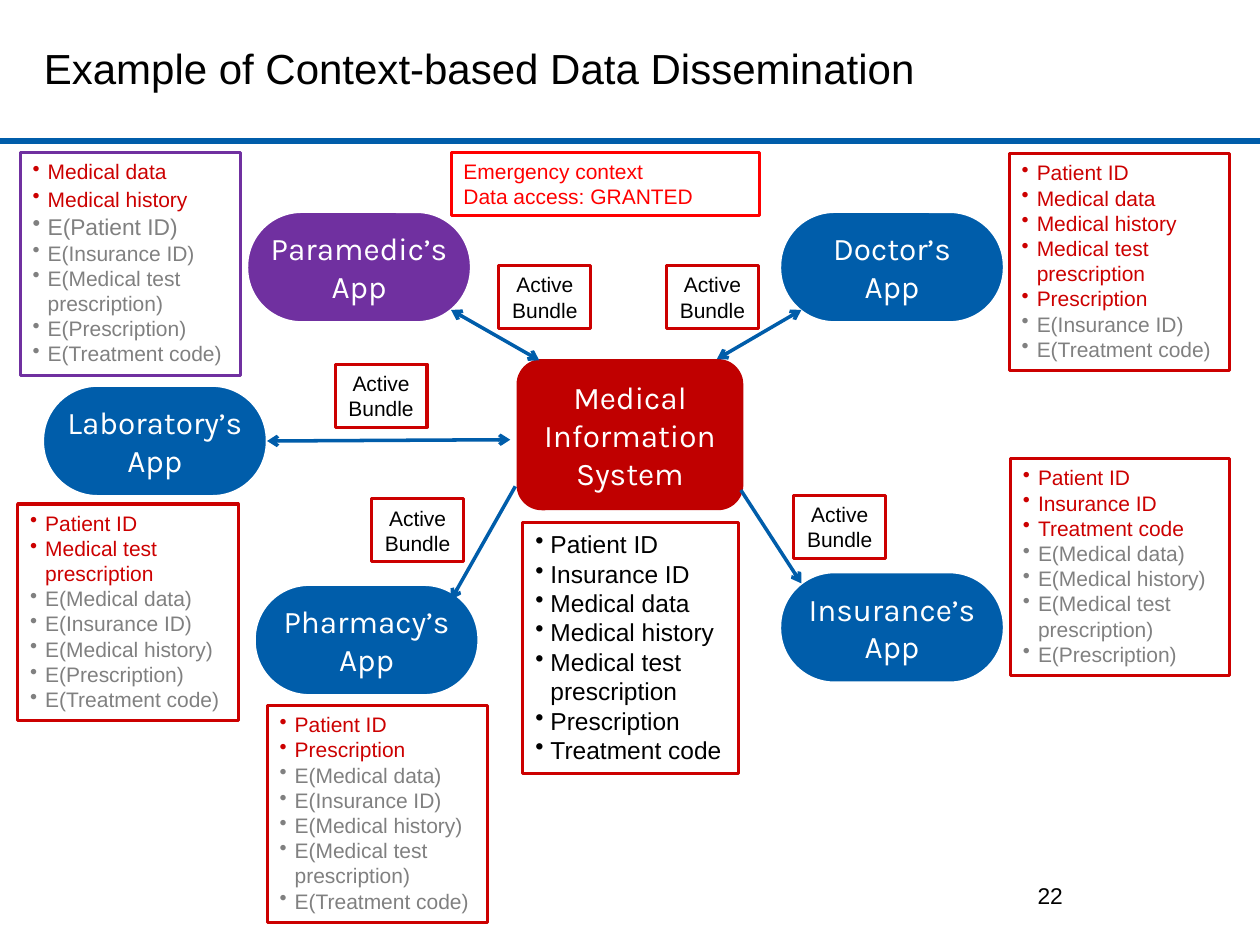
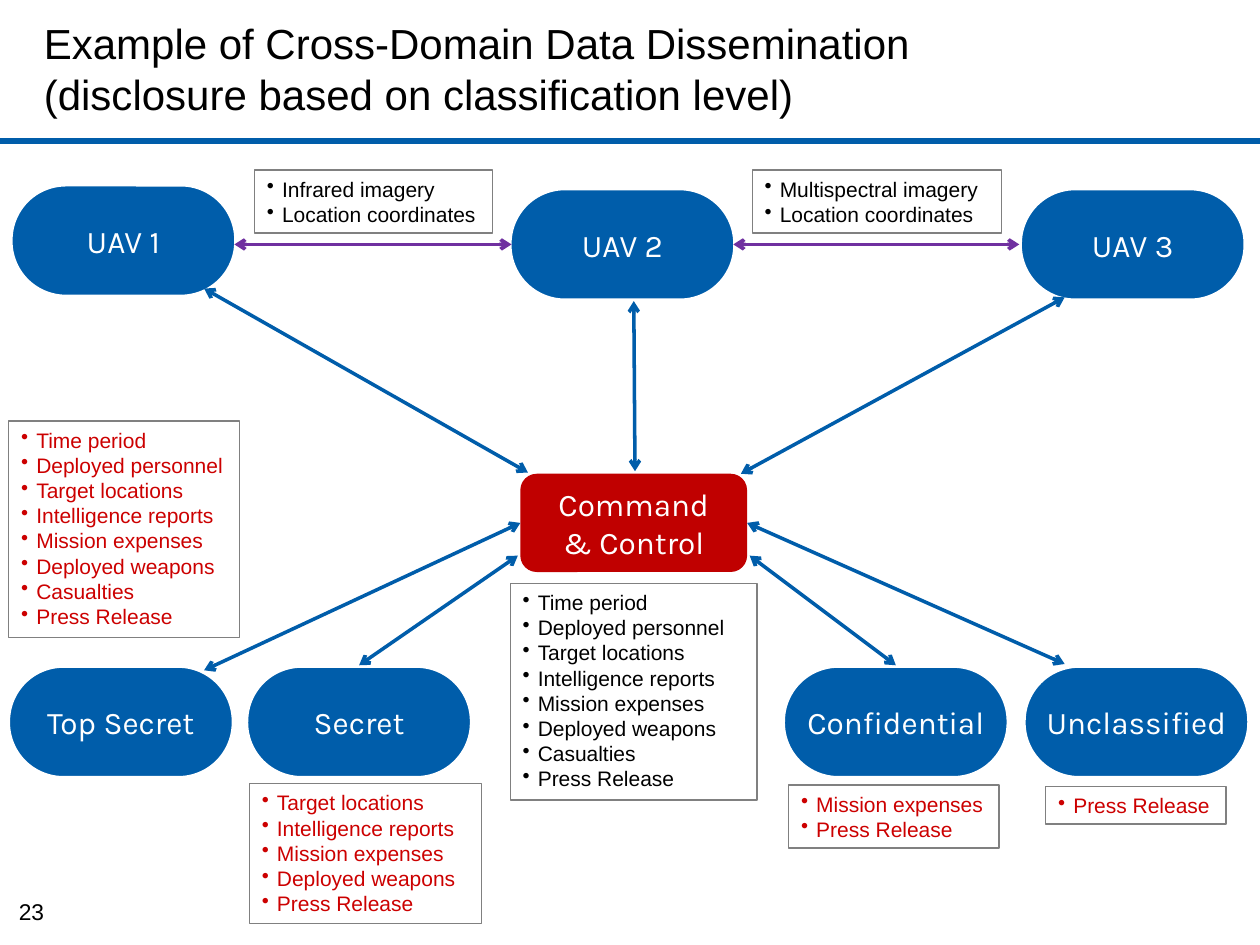
from lxml import etree
from pptx import Presentation
from pptx.dml.color import RGBColor
from pptx.enum.shapes import MSO_CONNECTOR, MSO_SHAPE
from pptx.enum.text import MSO_ANCHOR as ANCHOR, PP_ALIGN as ALIGN
from pptx.oxml.ns import qn
from pptx.util import Inches, Pt

BLUE = RGBColor(0x00, 0x5D, 0xAA)
PURPLE = RGBColor(0x70, 0x30, 0xA0)
DARK_RED = RGBColor(0xC0, 0x00, 0x00)
RED = RGBColor(0xCC, 0x00, 0x00)
BRIGHT_RED = RGBColor(0xFF, 0x00, 0x00)
GRAY = RGBColor(0x80, 0x80, 0x80)
BLACK = RGBColor(0x00, 0x00, 0x00)
WHITE = RGBColor(0xFF, 0xFF, 0xFF)

BODY_FONT, NODE_FONT = "Arial", "Karla"
PILL_W, PILL_H = 1.8, 0.9
BULLET_INDENT = 0.12


# ---- Basic parts ----
def write_lines(tf, lines, size, color, font=BODY_FONT, align=ALIGN.LEFT):
    """Write one paragraph per line and return the paragraphs."""
    for i, line in enumerate(lines):
        p = tf.paragraphs[0] if i == 0 else tf.add_paragraph()
        p.text = line
        p.alignment = align
        p.font.size, p.font.name = Pt(size), font
        p.font.color.rgb = color
    return tf.paragraphs


def set_frame(sp, anchor, margin_x=0.1, margin_y=0.05, wrap=True):
    tf = sp.text_frame
    tf.word_wrap = wrap
    tf.vertical_anchor = anchor
    tf.margin_left = tf.margin_right = Inches(margin_x)
    tf.margin_top = tf.margin_bottom = Inches(margin_y)
    return tf


def add_box(slide, kind, box, fill=None, line=None, width=1.75):
    sp = slide.shapes.add_shape(kind, *map(Inches, box))
    sp.shadow.inherit = False
    if fill is None:
        sp.fill.background()
    else:
        sp.fill.solid()
        sp.fill.fore_color.rgb = fill
    if line is None:
        sp.line.fill.background()
    else:
        sp.line.color.rgb = line
        sp.line.width = Pt(width)
    return sp


def add_line(slide, start, end, color=BLUE, width=2, ends=()):
    ln = slide.shapes.add_connector(
        MSO_CONNECTOR.STRAIGHT, *map(Inches, (*start, *end)))
    ln.line.color.rgb = color
    ln.line.width = Pt(width)
    for tag in ends:
        etree.SubElement(ln.line._get_or_add_ln(), qn(f"a:{tag}"), type="arrow")
    etree.SubElement(ln._element.spPr, qn("a:effectLst"))


def add_arrow(slide, start, end, color=BLUE, both=True):
    add_line(slide, start, end, color,
             ends=("headEnd", "tailEnd") if both else ("tailEnd",))


def set_indent(p, left, bullet=True):
    pPr = p._p.get_or_add_pPr()
    pPr.set("marL", str(Inches(left)))
    pPr.set("indent", str(-Inches(left) if bullet else 0))
    if bullet:
        mark = etree.Element(qn("a:buChar"), char="•")
        pPr.insert_element_before(mark, "a:tabLst", "a:defRPr", "a:extLst")


# ---- Diagram parts ----
def add_pill(slide, x, y, lines, fill=BLUE):
    sp = add_box(slide, MSO_SHAPE.ROUNDED_RECTANGLE,
                 (x, y, PILL_W, PILL_H), fill, WHITE, 3)
    sp.adjustments[0] = 0.493
    tf = set_frame(sp, ANCHOR.MIDDLE, 0.02, 0.02)
    write_lines(tf, lines, 18, WHITE, NODE_FONT, ALIGN.CENTER)


def add_hub(slide, box, lines):
    sp = add_box(slide, MSO_SHAPE.ROUNDED_RECTANGLE, box, DARK_RED)
    tf = set_frame(sp, ANCHOR.MIDDLE, 0.05, 0.05)
    write_lines(tf, lines, 18, WHITE, NODE_FONT, ALIGN.CENTER)


def add_data_list(slide, box, items, color=RED, line=RED, width=1.75, size=12):
    """Bulleted box; items written as E(...) are encrypted and gray."""
    sp = add_box(slide, MSO_SHAPE.RECTANGLE, box, None, line, width)
    paragraphs = write_lines(set_frame(sp, ANCHOR.TOP), items, size, color)
    for p in paragraphs:
        set_indent(p, BULLET_INDENT)
        if p.text.startswith("E("):
            p.font.color.rgb = GRAY
    return paragraphs


def add_bundle(slide, x, y):
    sp = add_box(slide, MSO_SHAPE.RECTANGLE, (x, y, 0.73, 0.5), None, RED)
    tf = set_frame(sp, ANCHOR.TOP, wrap=False)
    write_lines(tf, ["Active", "Bundle"], 12, BLACK, align=ALIGN.CENTER)


def add_base(prs, title, number, number_box):
    """Blank slide with the blue rule, the title and the page number."""
    slide = prs.slides.add_slide(prs.slide_layouts[6])
    add_line(slide, (0, 1.12), (10, 1.12), width=3.75)
    sp = slide.shapes.add_textbox(*map(Inches, (0.25, 0.08, 9, 0.92)))
    write_lines(set_frame(sp, ANCHOR.MIDDLE), title, 24, BLACK)
    sp = slide.shapes.add_textbox(*map(Inches, number_box))
    write_lines(set_frame(sp, ANCHOR.TOP), [number], 13, BLACK,
                align=ALIGN.CENTER)
    return slide


# ---- Slide 22: medical data ----
def build_medical_slide(prs):
    slide = add_base(prs, ["Example of Context-based Data Dissemination"],
                     "22", (7.17, 6.95, 2.33, 0.4))

    # Apps around the information system
    for x, y, owner, fill in [
        (2.01, 4.63, "Pharmacy’s", BLUE),
        (6.18, 4.53, "Insurance’s", BLUE),
        (6.18, 1.67, "Doctor’s", BLUE),
        (1.95, 1.67, "Paramedic’s", PURPLE),
        (0.33, 3.05, "Laboratory’s", BLUE),
    ]:
        add_pill(slide, x, y, [owner, "App"], fill)
    add_hub(slide, (4.1, 2.85, 1.8, 1.2), ["Medical", "Information", "System"])

    # Data flows
    for start, end, both in [
        ((3.58, 2.46), (4.28, 2.86), True),
        ((6.36, 2.46), (5.69, 2.85), True),
        ((2.12, 3.5), (4.05, 3.49), True),
        ((5.88, 3.89), (6.36, 4.63), False),
        ((4.09, 3.86), (3.58, 4.76), False),
    ]:
        add_arrow(slide, start, end, both=both)
    for x, y in [(2.66, 2.89), (2.95, 3.96), (5.29, 2.11), (3.96, 2.11),
                 (6.3, 3.93)]:
        add_bundle(slide, x, y)

    # All data held by the system
    held = add_data_list(
        slide, (4.15, 4.15, 1.71, 1.99),
        ["Patient ID", "Insurance ID", "Medical data", "Medical history",
         "Medical test", "Prescription", "Treatment code"], BLACK, size=14)
    held[4].add_line_break()
    held[4].add_run().text = "prescription"

    # Data disclosed to each app
    paramedic = add_data_list(
        slide, (0.16, 1.21, 1.75, 1.77),
        ["Medical data", "Medical history", "E(Patient ID)", "E(Insurance ID)",
         "E(Medical test prescription)", "E(Prescription)",
         "E(Treatment code)"], line=PURPLE)
    for p in paramedic[:2]:
        p.space_before = p.space_after = Pt(0.7)
    paramedic[2].font.size = Pt(13)

    for box, items in [
        ((8.01, 1.22, 1.75, 1.72),
         ["Patient ID", "Medical data", "Medical history",
          "Medical test prescription", "Prescription", "E(Insurance ID)",
          "E(Treatment code)"]),
        ((0.14, 4, 1.75, 1.72),
         ["Patient ID", "Medical test prescription", "E(Medical data)",
          "E(Insurance ID)", "E(Medical history)", "E(Prescription)",
          "E(Treatment code)"]),
        ((2.12, 5.6, 1.75, 1.72),
         ["Patient ID", "Prescription", "E(Medical data)", "E(Insurance ID)",
          "E(Medical history)", "E(Medical test prescription)",
          "E(Treatment code)"]),
        ((8.02, 3.64, 1.74, 1.72),
         ["Patient ID", "Insurance ID", "Treatment code", "E(Medical data)",
          "E(Medical history)", "E(Medical test prescription)",
          "E(Prescription)"]),
    ]:
        add_data_list(slide, box, items)

    # Context banner
    sp = add_box(slide, MSO_SHAPE.RECTANGLE, (3.58, 1.21, 2.45, 0.5),
                 None, BRIGHT_RED)
    write_lines(set_frame(sp, ANCHOR.TOP),
                ["Emergency context", "Data access: GRANTED"], 12, BRIGHT_RED)


# ---- Slide 23: classified data ----
def build_classified_slide(prs):
    slide = add_base(prs, ["Example of Cross-Domain Data Dissemination",
                           "(disclosure based on classification level)"],
                     "23", (0.03, 7.08, 0.44, 0.33))

    # Vehicles, command and clearance levels
    for x, y, name in [
        (0.08, 1.46, "UAV 1"), (4.04, 1.49, "UAV 2"), (8.09, 1.49, "UAV 3"),
        (0.06, 5.28, "Top Secret"), (1.95, 5.28, "Secret"),
        (6.21, 5.28, "Confidential"), (8.12, 5.28, "Unclassified"),
    ]:
        add_pill(slide, x, y, [name])
    add_hub(slide, (4.13, 3.76, 1.8, 0.78), ["Command", "& Control"])

    # Links between vehicles, then links to command
    for x1, x2 in [(1.86, 4.06), (5.82, 8.09)]:
        add_arrow(slide, (x1, 1.94), (x2, 1.94), PURPLE)
    for start, end in [
        ((5.88, 3.76), (8.45, 2.36)),
        ((5.04, 3.74), (5.03, 2.39)),
        ((4.19, 3.75), (1.62, 2.29)),
        ((8.45, 5.27), (5.93, 4.15)),
        ((1.62, 5.32), (4.13, 4.15)),
        ((2.85, 5.28), (4.11, 4.41)),
        ((7.11, 5.28), (5.95, 4.41)),
    ]:
        add_arrow(slide, start, end)

    # Data exchanged, held and disclosed
    reports = ["Time period", "Deployed personnel", "Target locations",
               "Intelligence reports", "Mission expenses", "Deployed weapons",
               "Casualties", "Press Release"]
    for box, items, color in [
        ((2.02, 1.35, 1.89, 0.5),
         ["Infrared imagery", "Location coordinates"], BLACK),
        ((5.97, 1.35, 1.98, 0.5),
         ["Multispectral imagery", "Location coordinates"], BLACK),
        ((4.05, 4.63, 1.96, 1.72), reports, BLACK),
        ((0.07, 3.34, 1.83, 1.72), reports, RED),
        ((1.98, 6.22, 1.84, 1.11), reports[2:6] + reports[-1:], RED),
        ((6.26, 6.23, 1.67, 0.5), [reports[4], reports[-1]], RED),
        ((8.3, 6.24, 1.43, 0.3), reports[-1:], RED),
    ]:
        add_data_list(slide, box, items, color, GRAY, 0.75)


def main():
    prs = Presentation()
    prs.slide_width, prs.slide_height = Inches(10), Inches(7.5)
    build_medical_slide(prs)
    build_classified_slide(prs)
    prs.save("out.pptx")


if __name__ == "__main__":
    main()
